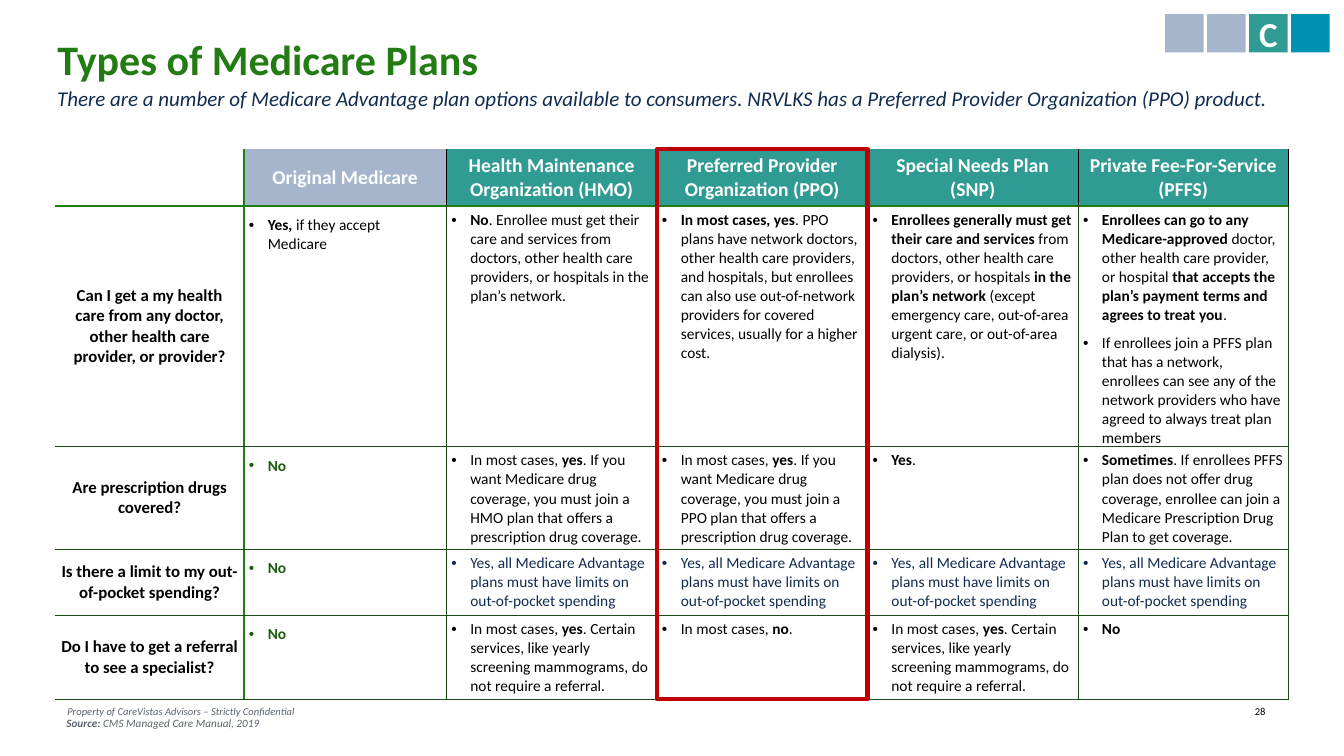
from lxml import etree
from pptx import Presentation
from pptx.dml.color import RGBColor
from pptx.enum.shapes import MSO_SHAPE
from pptx.enum.text import MSO_ANCHOR, PP_ALIGN
from pptx.oxml.ns import qn
from pptx.util import Pt

RECTANGLE = MSO_SHAPE.RECTANGLE
TOP, MIDDLE = MSO_ANCHOR.TOP, MSO_ANCHOR.MIDDLE
LEFT, CENTER = PP_ALIGN.LEFT, PP_ALIGN.CENTER

BLACK = RGBColor(0x00, 0x00, 0x00)
WHITE = RGBColor(0xFF, 0xFF, 0xFF)
GREEN = RGBColor(0x22, 0x7B, 0x13)
ANSWER_GREEN = RGBColor(0x1A, 0x5C, 0x0E)
GRID_GREEN = RGBColor(0x1B, 0x4C, 0x17)
NAVY = RGBColor(0x12, 0x2C, 0x50)
GRAY = RGBColor(0x5A, 0x65, 0x6F)
BLUE_GRAY = RGBColor(0xA4, 0xB5, 0xCC)
TEAL = RGBColor(0x30, 0x9B, 0x93)
BLUE = RGBColor(0x00, 0x90, 0xB1)
RED = RGBColor(0xC0, 0x00, 0x00)

TABLE_LEFT, TABLE_TOP = 39.6, 106.5
COLUMN_WIDTHS = [134.6, 144.7] + [150.4] * 4
ROW_HEIGHTS = [40.7, 171.5, 73.5, 47.2, 60]
PPO_COLUMN = 3

# Text between asterisks is bold; a line break starts a new paragraph.
HEADERS = [
    "", "*Original Medicare*", "*Health Maintenance Organization (HMO)*",
    "*Preferred Provider Organization (PPO)*", "*Special Needs Plan (SNP)*",
    "*Private Fee-For-Service (PFFS)*",
]
DRUG_COVERAGE = ("In most cases, *yes*. If you want Medicare drug coverage, you must join a "
                 "{} plan that offers a prescription drug coverage.")
SPENDING_LIMIT = "Yes, all Medicare Advantage plans must have limits on out-of-pocket spending"
REFERRAL = ("In most cases, *yes*. Certain services, like yearly screening mammograms, "
            "do not require a referral.")
QUESTIONS = [
    ["*Can I get a my health care from any doctor, other health care provider, or provider?*",
     "*Yes, *if they accept Medicare",
     "*No*. Enrollee must get their care and services from doctors, other health care "
     "providers, or hospitals in the plan’s network.",
     "*In most cases, yes*. PPO plans have network doctors, other health care providers, and "
     "hospitals, but enrollees can also use out-of-network providers for covered services, "
     "usually for a higher cost.",
     "*Enrollees generally must get their care and services* from doctors, other health care "
     "providers, or hospitals *in the plan’s network *(except emergency care, out-of-area "
     "urgent care, or out-of-area dialysis).",
     "*Enrollees can go to any Medicare-approved* doctor, other health care provider, or "
     "hospital *that accepts the plan’s payment terms and agrees to treat you*.\n"
     "If enrollees join a PFFS plan that has a network, enrollees can see any of the network "
     "providers who have agreed to always treat plan members"],
    ["*Are prescription drugs covered?*", "*No*",
     DRUG_COVERAGE.format("HMO"), DRUG_COVERAGE.format("PPO"), "*Yes*.",
     "*Sometimes*. If enrollees PFFS plan does not offer drug coverage, enrollee can join a "
     "Medicare Prescription Drug Plan to get coverage."],
    ["*Is there a limit to my out-of-pocket spending?*", "*No*"] + [SPENDING_LIMIT] * 4,
    ["*Do I have to get a referral to see a specialist?*", "*No*",
     REFERRAL, "In most cases, *no*.", REFERRAL, "*No*"],
]


class SlideBuilder:
    def __init__(self, presentation, font="Calibri"):
        self.slide = presentation.slides.add_slide(presentation.slide_layouts[5])
        self.font = font

    def add_runs(self, paragraph, text, size, color, italic=False, align=LEFT):
        """Add runs to the paragraph, bold between asterisks."""
        paragraph.alignment = align
        for index, part in enumerate(text.split("*")):
            if part:
                run = paragraph.add_run()
                run.text = part
                run.font.name, run.font.size = self.font, Pt(size)
                run.font.bold, run.font.italic = index % 2 == 1, italic
                run.font.color.rgb = color

    def title(self, text, left, top, width, height):
        title = self.slide.shapes.title
        title.left, title.top, title.width, title.height = map(Pt, (left, top, width, height))
        title.text_frame.vertical_anchor = TOP
        paragraph = title.text_frame.paragraphs[0]
        paragraph.line_spacing = 0.9
        self.add_runs(paragraph, text, 30, GREEN)

    def text(self, text, left, top, width, height, size, color, italic=False, spacing=1):
        box = self.slide.shapes.add_textbox(*map(Pt, (left, top, width, height)))
        box.text_frame.word_wrap = True
        paragraph = box.text_frame.paragraphs[0]
        paragraph.line_spacing = spacing
        self.add_runs(paragraph, text, size, color, italic)

    def rectangle(self, left, top, width, height, fill=None, line=None, text=""):
        shape = self.slide.shapes.add_shape(RECTANGLE, *map(Pt, (left, top, width, height)))
        shape.shadow.inherit = False
        if fill is None:
            shape.fill.background()
        else:
            shape.fill.solid()
            shape.fill.fore_color.rgb = fill
        if line is None:
            shape.line.fill.background()
        else:
            shape.line.color.rgb = line
            shape.line.width = Pt(3)
        if text:
            frame = shape.text_frame
            frame.margin_left = frame.margin_right = frame.margin_top = frame.margin_bottom = 0
            frame.vertical_anchor = MIDDLE
            self.add_runs(frame.paragraphs[0], text, 25, WHITE, align=CENTER)

    def table(self, rows):
        shape = self.slide.shapes.add_table(
            len(rows), len(COLUMN_WIDTHS), Pt(TABLE_LEFT), Pt(TABLE_TOP),
            Pt(sum(COLUMN_WIDTHS)), Pt(sum(ROW_HEIGHTS)))
        table = shape.table
        table.first_row = table.horz_banding = False
        for column, width in zip(table.columns, COLUMN_WIDTHS):
            column.width = Pt(width)
        for row, height in zip(table.rows, ROW_HEIGHTS):
            row.height = Pt(height)
        for row, texts in enumerate(rows):
            for column, text in enumerate(texts):
                self.cell(table.cell(row, column), row, column, text)

    def cell(self, cell, row, column, text):
        self.borders(cell, row, column)
        cell.fill.background()
        if row == 0 and column > 0:
            cell.fill.solid()
            cell.fill.fore_color.rgb = BLUE_GRAY if column == 1 else TEAL
        is_answer = row > 0 and column > 0
        cell.vertical_anchor = TOP if is_answer else MIDDLE
        cell.margin_left = cell.margin_right = Pt(3.6)
        cell.margin_top = Pt(7.2 if is_answer and column == 1 else 3.6 if is_answer else 2)
        cell.margin_bottom = Pt(0 if is_answer else 2)
        if row == 0:
            size, color = 14, WHITE
        elif column == 0:
            size, color = 12, BLACK
        else:
            size = 11
            color = BLACK if row == 1 else ANSWER_GREEN if column == 1 else NAVY if row == 3 else BLACK
        for index, line in enumerate(text.split("\n")):
            frame = cell.text_frame
            paragraph = frame.add_paragraph() if index else frame.paragraphs[0]
            if is_answer:
                self.bullet(paragraph)
                paragraph.space_before = Pt(3 if index else 0)
                paragraph.space_after = Pt(3 if "\n" in text and not index else 0)
            self.add_runs(paragraph, line, size, color, align=LEFT if is_answer else CENTER)

    def bullet(self, paragraph):
        properties = paragraph._p.get_or_add_pPr()
        properties.set("marL", str(Pt(13.5)))
        properties.set("indent", str(Pt(-13.5)))
        etree.SubElement(properties, qn("a:buFont"), typeface="Arial")
        etree.SubElement(properties, qn("a:buChar"), char="•")

    def borders(self, cell, row, column):
        thick, thin, header = (GREEN, 1.5), (GRID_GREEN, 0.25), (BLACK, 0.5)
        vertical = header if row == 0 else thin
        sides = {
            "L": None if column == 0 else thick if column == 1 else vertical,
            "R": thick if column == 0 else vertical,
            "T": None if row == 0 else thick if row == 1 else thin,
            "B": thick if row == 0 else thin,
        }
        properties = cell._tc.get_or_add_tcPr()
        for side, style in sides.items():
            line = etree.SubElement(properties, qn(f"a:ln{side}"))
            if style is None:
                etree.SubElement(line, qn("a:noFill"))
            else:
                color, width = style
                line.set("w", str(Pt(width)))
                fill = etree.SubElement(line, qn("a:solidFill"))
                etree.SubElement(fill, qn("a:srgbClr"), val=str(color))


def main():
    presentation = Presentation()
    presentation.slide_width, presentation.slide_height = Pt(960), Pt(540)
    builder = SlideBuilder(presentation)
    builder.text("Property of CareVistas Advisors – Strictly Confidential",
                 41, 500.4, 424, 16.6, 7.5, GRAY, italic=True)
    builder.text("28", 889.2, 500.4, 41.8, 16.6, 7.5, BLACK)
    builder.title("*Types of Medicare Plans*", 33.8, 24.5, 892, 49)
    builder.table([HEADERS] + QUESTIONS)
    builder.rectangle(TABLE_LEFT + sum(COLUMN_WIDTHS[:PPO_COLUMN]), TABLE_TOP,
                      COLUMN_WIDTHS[PPO_COLUMN], sum(ROW_HEIGHTS), line=RED)
    builder.text("There are a number of Medicare Advantage plan options available to consumers. "
                 "NRVLKS has a Preferred Provider Organization (PPO) product.",
                 33.8, 59.8, 892, 58, 15, NAVY, italic=True, spacing=0.9)
    for index, (color, letter) in enumerate(
            [(BLUE_GRAY, ""), (BLUE_GRAY, ""), (TEAL, "*C*"), (BLUE, "")]):
        builder.rectangle(832.3 + 30 * index, 10.1, 27.4, 27.4, fill=color, text=letter)
    builder.text("*Source: *CMS Managed Care Manual, 2019",
                 40.3, 508.3, 690, 17.3, 8, GRAY, italic=True)
    presentation.save("out.pptx")


if __name__ == "__main__":
    main()
